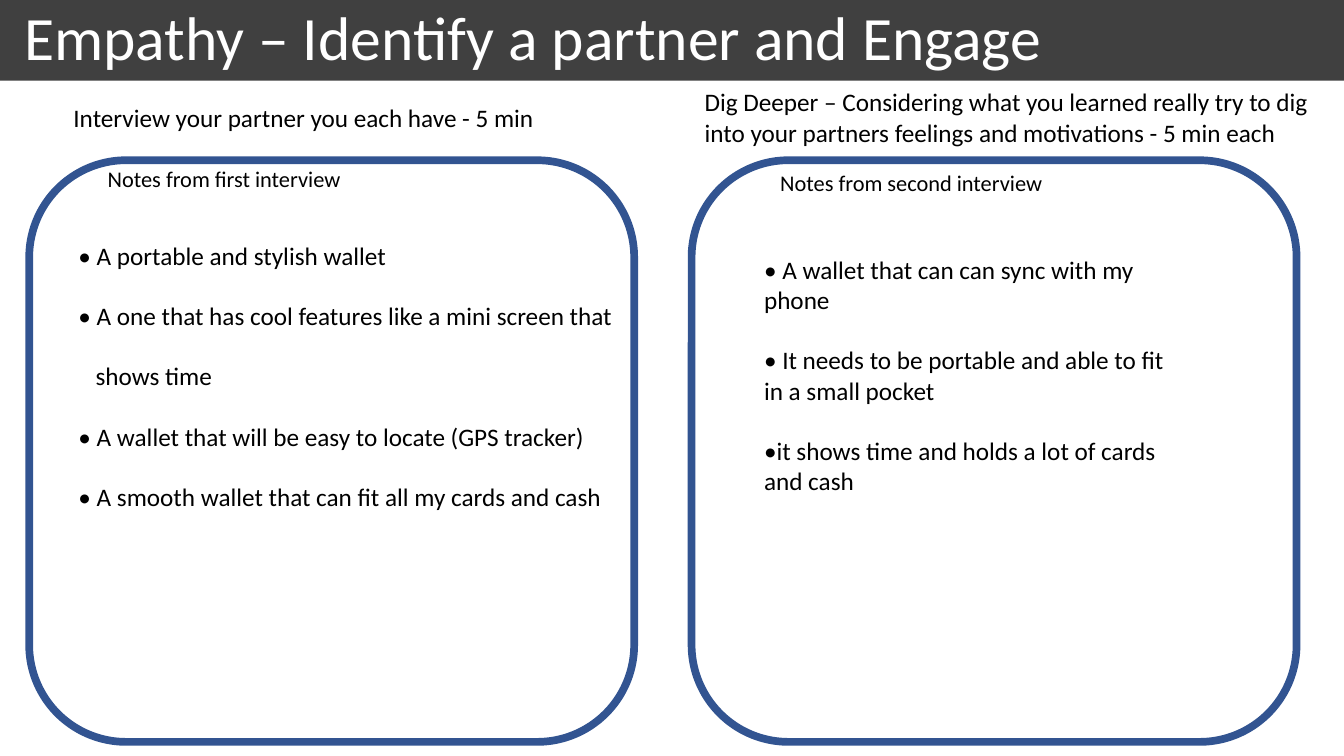
from pptx import Presentation
from pptx.dml.color import RGBColor
from pptx.enum.shapes import MSO_SHAPE
from pptx.enum.text import MSO_ANCHOR, PP_ALIGN
from pptx.util import Pt

PX = 9144  # 100 px to the inch
WIDE, HIGH = 1333, 750
FONT = "Calibri"
BLACK, WHITE, GREY, BLUE = "000000", "FFFFFF", "404040", "325491"


def tint(code):
    return RGBColor.from_string(code)


def scale(*sizes):
    return [size * PX for size in sizes]


def style(para, size, color):
    para.font.name = FONT
    para.font.size = Pt(size)
    para.font.color.rgb = tint(color)
    para.alignment = PP_ALIGN.LEFT


def add_text(slide, box, lines, size, gap=0):
    frame = slide.shapes.add_textbox(*scale(*box)).text_frame
    frame.word_wrap = True
    for i, line in enumerate(lines):
        para = frame.paragraphs[0] if i == 0 else frame.add_paragraph()
        para.text = line
        style(para, size, BLACK)
        if i:
            para.space_before = Pt(gap)
    return frame


def add_title(slide, box, text):
    bar = slide.shapes.add_shape(MSO_SHAPE.RECTANGLE, *scale(*box))
    bar.shadow.inherit = False
    bar.fill.solid()
    bar.fill.fore_color.rgb = tint(GREY)
    bar.line.fill.background()
    frame = bar.text_frame
    frame.margin_left = 24 * PX
    frame.vertical_anchor = MSO_ANCHOR.MIDDLE
    para = frame.paragraphs[0]
    para.text = text
    para.line_spacing = 0.9
    style(para, 44, WHITE)


def add_panel(slide, box, head, label, notes):
    """Each part is a (box, text) pair, its box offset from the panel corner."""
    left, top, wide, high = box
    # Rounded frame
    frame = slide.shapes.add_shape(MSO_SHAPE.ROUNDED_RECTANGLE, *scale(*box))
    frame.shadow.inherit = False
    frame.fill.background()
    frame.line.color.rgb = tint(BLUE)
    frame.line.width = Pt(5.5)
    # Heading, label and notes
    frames = []
    for (part, lines), size in zip((head, label, notes), (18, 16, 18)):
        x, y, w, h = part
        place = (left + x, top + y, w, h)
        frames.append(add_text(slide, place, lines, size, gap=21.6))
    return frames[-1]


def main():
    deck = Presentation()
    deck.slide_width, deck.slide_height = scale(WIDE, HIGH)
    slide = deck.slides.add_slide(deck.slide_layouts[6])

    add_title(slide, (0, 0, WIDE, 80), "Empathy – Identify a partner and Engage")

    # First interview
    notes = add_panel(
        slide, (29, 159, 600, 577),
        ((34, -62, 581, 40), ["Interview your partner you each have - 5 min"]),
        ((68, 0, 338, 37), ["Notes from first interview"]),
        ((39, 74, 560, 252), [
            "• A portable and stylish wallet",
            "• A one that has cool features like a mini screen that",
            "shows time",
            "• A wallet that will be easy to locate (GPS tracker)",
            "• A smooth wallet that can fit all my cards and cash",
        ]),
    )
    # The carried-over line aligns with the words after the bullet
    more = notes.paragraphs[2]
    more._p.get_or_add_pPr().set("marL", str(17 * PX))

    # Second interview
    add_panel(
        slide, (686, 159, 600, 577),
        ((3, -78, 628, 71), [
            "Dig Deeper – Considering what you learned really try to dig "
            "into your partners feelings and motivations - 5 min each"]),
        ((78, 4, 338, 37), ["Notes from second interview"]),
        ((62, 88, 424, 252), [
            "• A wallet that can can sync with my phone",
            "• It needs to be portable and able to fit in a small pocket",
            "•it shows time and holds a lot of cards and cash",
        ]),
    )
    deck.save("out.pptx")


if __name__ == "__main__":
    main()
